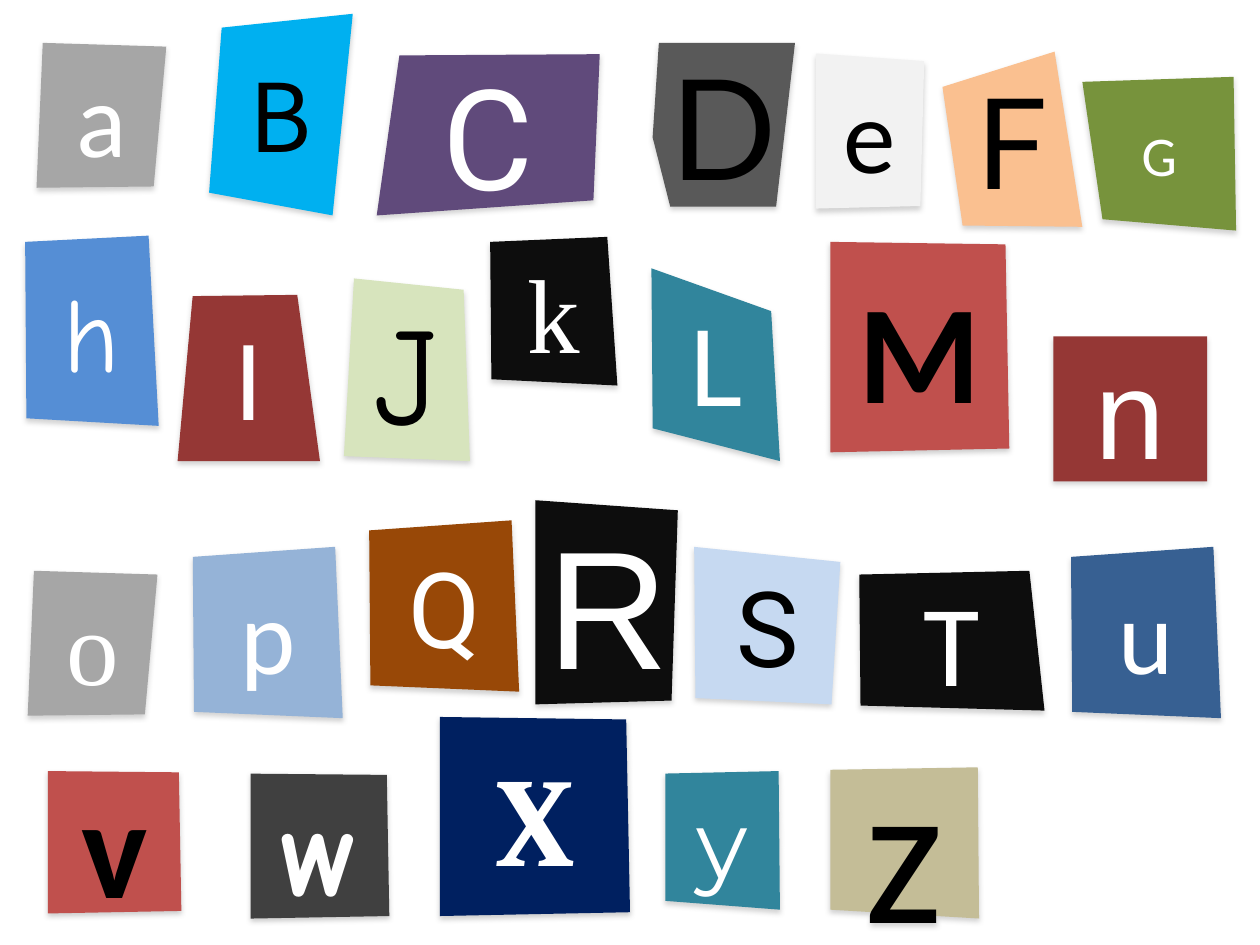
from lxml.etree import SubElement
from pptx import Presentation
from pptx.dml.color import RGBColor
from pptx.enum.shapes import MSO_SHAPE
from pptx.enum.text import MSO_ANCHOR, PP_ALIGN
from pptx.oxml.ns import qn
from pptx.util import Pt

PX = 9144  # EMU per px, 100 px to the inch

COLORS = {
    "white": "FFFFFF", "black": "000000", "ink": "0D0D0D", "silver": "A6A6A6",
    "slate": "595959", "charcoal": "404040", "mist": "F2F2F2", "cyan": "00B0F0",
    "purple": "604A7B", "peach": "FAC090", "green": "77933C", "blue": "558ED5",
    "maroon": "953735", "lime": "D7E4BD", "teal": "31859C", "red": "C0504D",
    "sky": "95B3D7", "brown": "984807", "ice": "C6D9F1", "steel": "376092",
    "navy": "002060", "sand": "C4BD97", "shadow": "808080",
}

# letter: paper colour, left, top, width, height
PAPERS = {
    "a": ("silver", 29, 34, 103, 115),
    "B": ("cyan", 166, 11, 114, 160),
    "C": ("purple", 299, 43, 177, 128),
    "D": ("slate", 518, 34, 113, 130),
    "e": ("mist", 648, 43, 85, 122),
    "F": ("peach", 748, 41, 111, 139),
    "G": ("green", 859, 61, 122, 122),
    "h": ("blue", 20, 187, 106, 151),
    "I": ("maroon", 141, 234, 113, 132),
    "J": ("lime", 273, 221, 100, 145),
    "k": ("ink", 389, 188, 101, 118),
    "L": ("teal", 517, 213, 102, 153),
    "M": ("red", 659, 192, 142, 167),
    "n": ("maroon", 836, 267, 122, 115),
    "o": ("silver", 22, 453, 103, 115),
    "p": ("sky", 153, 434, 119, 136),
    "Q": ("brown", 293, 413, 119, 136),
    "R": ("ink", 425, 397, 113, 162),
    "S": ("ice", 551, 434, 116, 125),
    "T": ("ink", 682, 453, 147, 111),
    "u": ("steel", 850, 434, 119, 136),
    "v": ("red", 38, 612, 106, 113),
    "w": ("charcoal", 199, 614, 110, 115),
    "X": ("navy", 349, 569, 151, 158),
    "y": ("teal", 528, 612, 91, 110),
    "z": ("sand", 659, 609, 118, 120),
}

# Percent of the width and height by which a cut moves each corner inwards.
# "notch" is an extra point on the left side.
CUTS = {
    "ao": {"top left": (5, 0), "bottom right": (10, 1), "top right": (0, 3)},
    "B": {"top left": (9, 7), "bottom left": (0, 11), "bottom right": (14, 0)},
    "C": {"top left": (10, 1), "bottom right": (3, 9)},
    "D": {"top left": (4, 0), "notch": (0, 58), "bottom left": (12, 0), "bottom right": (13, 0)},
    "eR": {"bottom right": (4, 2), "top right": (0, 5)},
    "F": {"top left": (0, 20), "bottom left": (14, 1), "top right": (20, 0)},
    "G": {"top left": (0, 3), "bottom left": (13, 7), "top right": (2, 0)},
    "hkT": {"top left": (0, 3), "bottom left": (1, 4), "top right": (8, 0)},
    "I": {"top left": (11, 1), "top right": (16, 0)},
    "J": {"top left": (8, 0), "bottom left": (0, 3), "top right": (5, 6)},
    "L": {"bottom left": (1, 17), "top right": (7, 22)},
    "MvwX": {"bottom right": (0, 2), "top right": (2, 1)},
    "pQu": {"top left": (0, 6), "bottom left": (1, 4), "top right": (5, 0)},
    "S": {"bottom left": (1, 4), "bottom right": (6, 0), "top right": (0, 10)},
    "yz": {"top left": (0, 2), "bottom left": (0, 6), "top right": (1, 0)},
}

TYPEFACES = {
    "Calibri": "aeGMpTuvz", "Roboto": "CIQS", "Lato": "DFL", "Comic Neue": "hJw",
    "Times New Roman": "ko", "Arial": "R", "Cambria": "X", "Courier New": "n",
    "Montserrat": "y", "Noto Sans CJK SC": "B",
}
SIZES = {32: "G", 54: "By", 60: "aehIkLopQSu", 66: "T", 72: "FnwX", 80: "CDJMv",
         96: "R", 115: "z"}
BLACK_LETTERS = "BDeFJMSvz"
BOLD = "MvwX"
OUTLINED = "e"
STRONG_SHADOW = "DMvwX"


def group_of(groups, letter):
    return next((key for key, letters in groups.items() if letter in letters), None)


def cut_paper(shapes, cut, left, top, width, height):
    """Draw a sheet whose corners are moved inwards by the percentages in cut."""
    points = []
    for corner in ("top left", "notch", "bottom left", "bottom right", "top right"):
        if corner == "notch" and corner not in cut:
            continue
        dx, dy = cut.get(corner, (0, 0))
        x = 100 - dx if "right" in corner else dx
        y = 100 - dy if "bottom" in corner else dy
        points.append((round(left + width * x / 100), round(top + height * y / 100)))
    builder = shapes.build_freeform(*points[0], scale=PX)
    builder.add_line_segments(points[1:], close=True)
    return builder.convert_to_shape()


deck = Presentation()
deck.slide_width, deck.slide_height = 1000 * PX, 750 * PX
slide = deck.slides.add_slide(deck.slide_layouts[6])

for letter, (paper_color, *box) in PAPERS.items():
    cut_letters = next((letters for letters in CUTS if letter in letters), None)
    if cut_letters:
        paper = cut_paper(slide.shapes, CUTS[cut_letters], *box)
    else:
        paper = slide.shapes.add_shape(MSO_SHAPE.RECTANGLE, *(side * PX for side in box))

    paper.fill.solid()
    paper.fill.fore_color.rgb = RGBColor.from_string(COLORS[paper_color])
    if letter in OUTLINED:
        paper.line.color.rgb = RGBColor.from_string(COLORS[paper_color])
        paper.line.width = Pt(0.75)
    else:
        paper.line.fill.background()

    distance, opacity = (1.6, 38) if letter in STRONG_SHADOW else (1.8, 35)
    paper.shadow.inherit = False
    effects = paper._element.spPr.find(qn("a:effectLst"))
    shadow = SubElement(effects, qn("a:outerShdw"), blurRad=str(Pt(3.1)),
                        dist=str(Pt(distance)), dir="5400000", rotWithShape="0")
    tint = SubElement(shadow, qn("a:srgbClr"), val=COLORS["shadow"])
    SubElement(tint, qn("a:alpha"), val=str(opacity * 1000))

    paper.text_frame.vertical_anchor = MSO_ANCHOR.MIDDLE
    line = paper.text_frame.paragraphs[0]
    line.alignment = PP_ALIGN.CENTER
    glyph = line.add_run()
    glyph.text = letter
    ink = "black" if letter in BLACK_LETTERS else "white"
    glyph.font.color.rgb = RGBColor.from_string(COLORS[ink])
    letter_format = {
        "name": group_of(TYPEFACES, letter),
        "size": Pt(group_of(SIZES, letter)),
        "bold": letter in BOLD,
    }
    for attribute, value in letter_format.items():
        setattr(glyph.font, attribute, value)

deck.save("out.pptx")
